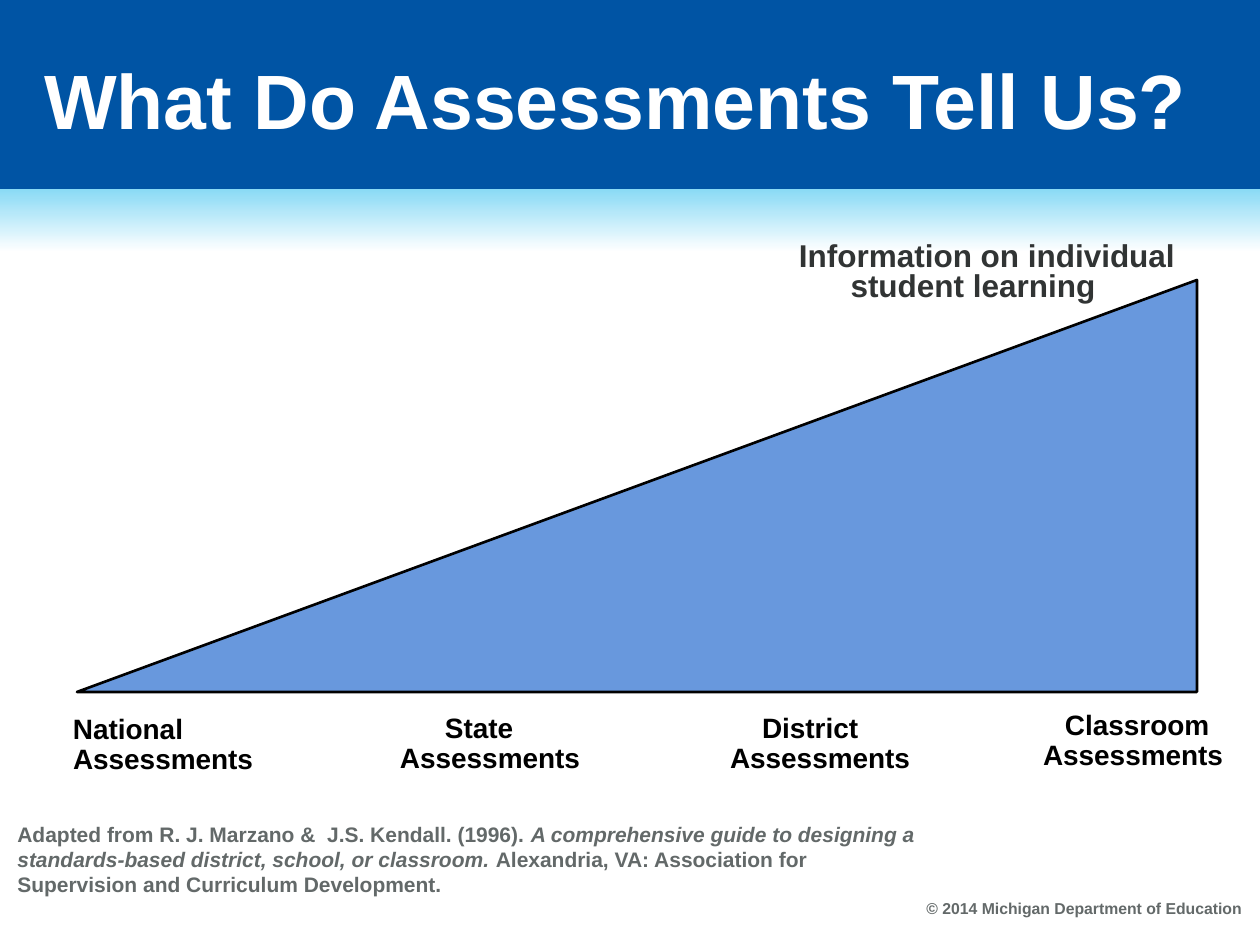
"""Build the slide on what assessments tell us."""
from pptx import Presentation
from pptx.dml.color import RGBColor
from pptx.enum.shapes import MSO_SHAPE
from pptx.enum.text import MSO_ANCHOR, PP_ALIGN
from pptx.util import Pt

PX = 914400 / 126
HUE = {
    "band": "0054A4", "sky": "89DAF5", "white": "FFFFFF", "grey": "636969",
    "dark": "313434", "black": "000000", "wedge": "6898DD",
}


def tint(name):
    return RGBColor.from_string(HUE[name])


def write(box, runs, size, hue, inset=(0, 0), wrap=False):
    area = slide.shapes.add_textbox(*[round(v * PX) for v in box])
    frame = area.text_frame
    frame.word_wrap = wrap
    frame.vertical_anchor = MSO_ANCHOR.TOP
    frame.margin_left = frame.margin_right = Pt(inset[0])
    frame.margin_top = frame.margin_bottom = Pt(inset[1])
    para = frame.paragraphs[0]
    para.font.name = "Arial"
    para.font.size = Pt(size)
    para.font.bold = True
    para.font.color.rgb = tint(hue)
    for text, slant in runs:
        run = para.add_run()
        run.text = text
        if slant:
            run.font.italic = True
    return para


deck = Presentation()
deck.slide_width = round(1260 * PX)
deck.slide_height = round(945 * PX)
slide = deck.slides.add_slide(deck.slide_layouts[6])

for top, high in ((0, 189), (189, 63)):
    bar = slide.shapes.add_shape(
        MSO_SHAPE.RECTANGLE, 0, round(top * PX), deck.slide_width, round(high * PX))
    bar.shadow.inherit = False
    bar.line.fill.background()
    if top == 0:
        bar.fill.solid()
        bar.fill.fore_color.rgb = tint("band")
    else:
        bar.fill.gradient()
        bar.fill.gradient_angle = 270
        for stop, hue, place in zip(bar.fill.gradient_stops, ("sky", "white"), (0, 1)):
            stop.color.rgb = tint(hue)
            stop.position = place

pad = (7.2, 3.6)
write((914, 893, 462, 32), [("© 2014 Michigan Department of Education", False)],
      9, "grey", pad)
write((5, 815, 934, 63), [
    ("Adapted from R. J. Marzano &  J.S. Kendall. (1996). ", False),
    ("A comprehensive guide to designing a standards-based district, school, "
     "or classroom. ", True),
    ("Alexandria, VA: Association for Supervision and Curriculum Development.", False),
], 12, "grey", pad, True)

write((799, 236, 413, 42), [("Information on individual", False)], 18, "dark")
para = write((839, 266, 268, 42), [("student learning", False)], 18, "dark")
para.alignment = PP_ALIGN.CENTER

for name, left, wide, low, top in (
    ("National", 73, 116, 73, 712),
    ("State", 445, 76, 400, 711),
    ("District", 762, 110, 730, 711),
    ("Classroom", 1065, 158, 1043, 708),
):
    write((left, top, wide, 32), [(name, False)], 16, "black")
    write((low, top + 30, 185, 32), [("Assessments", False)], 16, "black")

path = slide.shapes.build_freeform(77, 692, scale=PX)
path.add_line_segments([(1197, 692), (1197, 280)], close=True)
wedge = path.convert_to_shape()
wedge.shadow.inherit = False
wedge.fill.solid()
wedge.fill.fore_color.rgb = tint("wedge")
wedge.line.color.rgb = tint("black")
wedge.line.width = Pt(1.5)

title = write((32, 63, 1197, 158), [("What Do Assessments Tell Us?", False)],
              44, "white", pad, True)
title.line_spacing = 0.82

deck.save("out.pptx")
